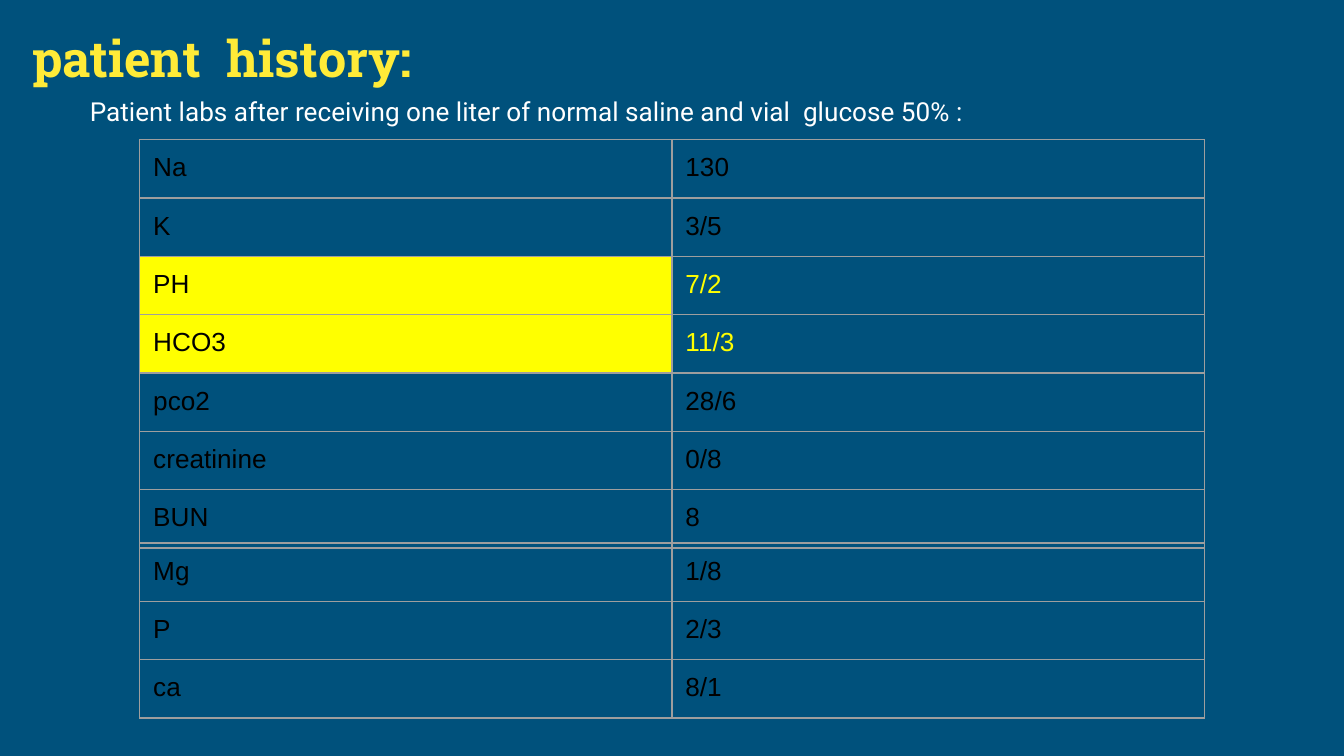
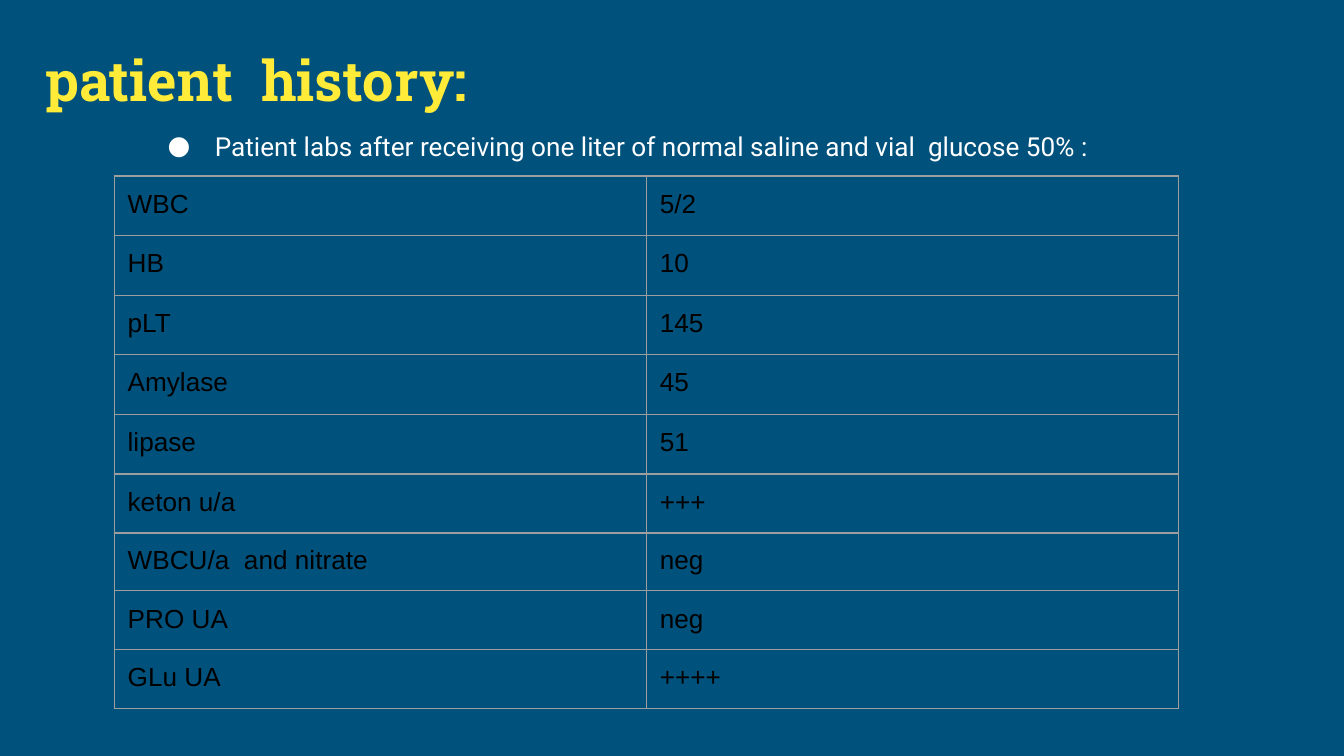
from lxml import etree
from pptx import Presentation
from pptx.dml.color import RGBColor
from pptx.enum.text import MSO_ANCHOR, MSO_AUTO_SIZE, PP_ALIGN
from pptx.oxml.ns import qn
from pptx.util import Pt

PX = 9144  # 100 px to the inch
SLIDE_W = 1000 * PX
SLIDE_H = SLIDE_W * 9 // 16
INSET = 10 * PX

NAVY = RGBColor(0x00, 0x51, 0x7C)
GOLD = RGBColor(0xFF, 0xEB, 0x38)
WHITE = RGBColor(0xFF, 0xFF, 0xFF)
BLACK = RGBColor(0x00, 0x00, 0x00)
YELLOW = RGBColor(0xFF, 0xFF, 0x00)
GRAY = RGBColor(0x9E, 0x9E, 0x9E)

TITLE = "patient  history:"
SUBTITLE = ("Patient labs after receiving one liter of normal saline "
            "and vial  glucose 50% :")
TITLE_FONT = {"name": "Roboto Slab", "bold": True}
SUBTITLE_FONT = {"name": "Roboto", "size": Pt(14)}
CELL_FONT = {"name": "Arial", "size": Pt(14)}
MARGINS = {f"margin_{side}": INSET for side in ("left", "right", "top", "bottom")}

SLIDES = [
    {
        "title": (14, 61, 915, 9), "title_size": 27,
        "subtitle": (57, 61, 700, 43), "bullet": False,
        "tables": [
            ((104, 104, 792, 303),
             [("Na", "130"), ("K", "3/5"), ("PH", "7/2"), ("HCO3", "11/3"),
              ("pco2", "28/6"), ("creatinine", "0/8"), ("BUN", "8")]),
            ((104, 404, 792, 130),
             [("Mg", "1/8"), ("P", "2/3"), ("ca", "8/1")]),
        ],
        "abnormal": {"PH", "HCO3"},
    },
    {
        "title": (24, 19, 915, 75), "title_size": 30,
        "subtitle": (100, 87, 800, 43), "bullet": True,
        "tables": [
            ((85, 131, 792, 266),
             [("WBC", "5/2"), ("HB", "10"), ("pLT", "145"), ("Amylase", "45"),
              ("lipase", "51"), ("keton u/a", "+++")]),
            ((85, 396, 792, 131),
             [("WBCU/a  and nitrate", "neg"), ("PRO UA", "neg"),
              ("GLu UA", "++++")]),
        ],
        "abnormal": set(),
    },
]


def emu(box):
    return [v * PX for v in box]


def set_attrs(obj, values):
    for name, value in values.items():
        setattr(obj, name, value)


def write(tf, text, color, font):
    p = tf.paragraphs[0]
    p.alignment = PP_ALIGN.LEFT
    r = p.add_run()
    r.text = text
    set_attrs(r.font, font)
    r.font.color.rgb = color
    return p


def add_bullet(p):
    pPr = p._p.get_or_add_pPr()
    pPr.set("marL", str(50 * PX))
    pPr.set("indent", str(-35 * PX))
    color = etree.SubElement(pPr, qn("a:buClr"))
    etree.SubElement(color, qn("a:srgbClr"), val=str(WHITE))
    etree.SubElement(pPr, qn("a:buSzPts"), val="1400")
    etree.SubElement(pPr, qn("a:buFont"), typeface=SUBTITLE_FONT["name"])
    etree.SubElement(pPr, qn("a:buChar"), char="●")


def add_borders(cell):
    tcPr = cell._tc.get_or_add_tcPr()
    for side in ("lnL", "lnR", "lnT", "lnB"):
        ln = etree.SubElement(tcPr, qn(f"a:{side}"), w=str(Pt(0.75)))
        fill = etree.SubElement(ln, qn("a:solidFill"))
        etree.SubElement(fill, qn("a:srgbClr"), val=str(GRAY))


def add_title(s, box, size):
    sp = s.shapes.title
    sp.left, sp.top, sp.width, sp.height = emu(box)
    tf = sp.text_frame
    set_attrs(tf, {**MARGINS, "word_wrap": True,
                   "auto_size": MSO_AUTO_SIZE.NONE,
                   "vertical_anchor": MSO_ANCHOR.BOTTOM})
    write(tf, TITLE, GOLD, {**TITLE_FONT, "size": Pt(size)})


def add_subtitle(s, box, bullet):
    tf = s.shapes.add_textbox(*emu(box)).text_frame
    set_attrs(tf, {**MARGINS, "word_wrap": True,
                   "auto_size": MSO_AUTO_SIZE.SHAPE_TO_FIT_TEXT})
    p = write(tf, SUBTITLE, WHITE, SUBTITLE_FONT)
    if bullet:
        add_bullet(p)


def add_lab_table(s, box, labs, abnormal):
    """Two equal columns; abnormal labs get a yellow name cell and value."""
    table = s.shapes.add_table(len(labs), 2, *emu(box)).table
    set_attrs(table, {"first_row": False, "horz_banding": False})
    for i, lab in enumerate(labs):
        marked = lab[0] in abnormal
        for j, text in enumerate(lab):
            cell = table.cell(i, j)
            set_attrs(cell, MARGINS)
            add_borders(cell)
            if marked and j == 0:
                cell.fill.solid()
                cell.fill.fore_color.rgb = YELLOW
            else:
                cell.fill.background()
            color = YELLOW if marked and j == 1 else BLACK
            write(cell.text_frame, text, color, CELL_FONT)


def add_lab_slide(prs, content):
    s = prs.slides.add_slide(prs.slide_layouts.get_by_name("Title Only"))
    add_title(s, content["title"], content["title_size"])
    add_subtitle(s, content["subtitle"], content["bullet"])
    for box, labs in content["tables"]:
        add_lab_table(s, box, labs, content["abnormal"])


def main():
    prs = Presentation()
    set_attrs(prs, {"slide_width": SLIDE_W, "slide_height": SLIDE_H})
    fill = prs.slide_master.background.fill
    fill.solid()
    fill.fore_color.rgb = NAVY
    for content in SLIDES:
        add_lab_slide(prs, content)
    prs.save("out.pptx")


if __name__ == "__main__":
    main()
